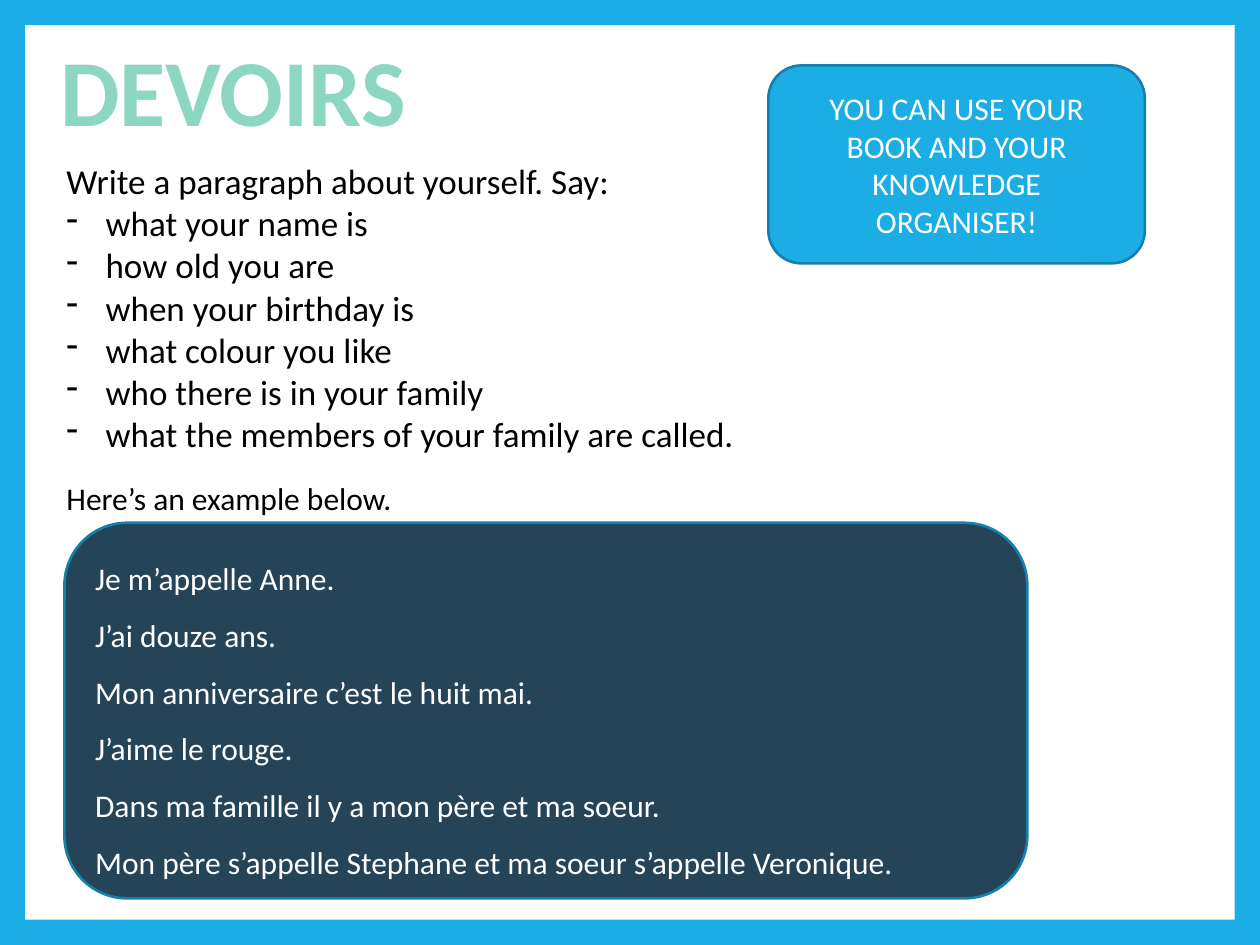
from lxml.etree import SubElement
from pptx import Presentation
from pptx.dml.color import RGBColor
from pptx.enum.shapes import MSO_SHAPE as Shape
from pptx.enum.text import MSO_ANCHOR as Anchor, MSO_AUTO_SIZE as AutoSize, PP_ALIGN as Align
from pptx.oxml.ns import qn
from pptx.util import Cm, Pt

FONT = "Calibri"
BLUE, EDGE, NAVY, MINT = "1CADE4", "1580A9", "264457", "8DD6C1"
WHITE, BLACK = "FFFFFF", "000000"
BORDER = 0.51
HANGING = 0.79

TASKS = [
    "what your name is",
    "how old you are",
    "when your birthday is",
    "what colour you like",
    "who there is in your family",
    "what the members of your family are called.",
]
EXAMPLE = [
    "Je m’appelle Anne.",
    "J’ai douze ans.",
    "Mon anniversaire c’est le huit mai.",
    "J’aime le rouge.",
    "Dans ma famille il y a mon père et ma soeur.",
    "Mon père s’appelle Stephane et ma soeur s’appelle Veronique.",
]


def set_color(target, value):
    """Give a fill or a line a solid colour."""
    target.solid()
    target.fore_color.rgb = RGBColor.from_string(value)


def write_lines(frame, lines, size, color, bold=False, align=Align.LEFT, spacing=None):
    """Write one paragraph per line and return the paragraphs."""
    for index, line in enumerate(lines):
        paragraph = frame.add_paragraph() if index else frame.paragraphs[0]
        paragraph.alignment = align
        paragraph.line_spacing = spacing
        run = paragraph.add_run()
        run.text = line
        run.font.name, run.font.size, run.font.bold = FONT, Pt(size), bold
        set_color(run.font.fill, color)
    return frame.paragraphs


def add_text(slide, box, lines, size, color, wrap=True, **style):
    frame = slide.shapes.add_textbox(*map(Cm, box)).text_frame
    frame.word_wrap = wrap
    frame.auto_size = AutoSize.SHAPE_TO_FIT_TEXT
    return write_lines(frame, lines, size, color, **style)


def add_panel(slide, kind, box, fill, edge=None):
    panel = slide.shapes.add_shape(kind, *map(Cm, box))
    panel.shadow.inherit = False
    set_color(panel.fill, fill)
    if edge:
        set_color(panel.line.fill, edge)
        panel.line.width = Pt(1.5)
    else:
        panel.line.fill.background()
    return panel


def add_dash(paragraph):
    """Turn a paragraph into a dashed list item with a hanging indent."""
    properties = paragraph._p.get_or_add_pPr()
    properties.set("marL", str(Cm(HANGING)))
    properties.set("indent", str(-Cm(HANGING)))
    SubElement(properties, qn("a:buFontTx"))
    SubElement(properties, qn("a:buChar")).set("char", "-")


def add_background(slide, width, height):
    set_color(slide.background.fill, BLUE)
    box = (BORDER, BORDER, width - 2 * BORDER, height - 2 * BORDER)
    add_panel(slide, Shape.RECTANGLE, box, WHITE)


def add_instructions(slide, left, top, width):
    """Task list with the caption of the example under it."""
    intro = "Write a paragraph about yourself. Say:"
    paragraphs = add_text(slide, (left, top, width, 6.25), [intro, *TASKS], 20, BLACK)
    for paragraph in paragraphs[1:]:
        add_dash(paragraph)
    caption = (left, top + 6.43, width, 1.02)
    add_text(slide, caption, ["Here’s an example below."], 18, BLACK)


def add_rounded_text(slide, box, fill, lines, **style):
    panel = add_panel(slide, Shape.ROUNDED_RECTANGLE, box, fill, EDGE)
    frame = panel.text_frame
    frame.word_wrap = True
    frame.vertical_anchor = Anchor.MIDDLE
    write_lines(frame, lines, 18, WHITE, **style)


def main():
    width, height = 25.4, 19.05
    presentation = Presentation()
    presentation.slide_width, presentation.slide_height = Cm(width), Cm(height)
    slide = presentation.slides.add_slide(presentation.slide_layouts[6])

    add_background(slide, width, height)

    # Heading
    add_text(slide, (BORDER, 0.53, 8.38, 2.57), ["DEVOIRS"], 54, MINT,
             wrap=False, bold=True, align=Align.CENTER)

    add_instructions(slide, 1.09, 3.1, 20.4)

    # Hint
    add_rounded_text(slide, (15.49, 1.32, 7.59, 3.99), BLUE,
                     ["YOU CAN USE YOUR BOOK AND YOUR KNOWLEDGE ORGANISER!"],
                     align=Align.CENTER)

    # Example answer
    add_rounded_text(slide, (1.3, 10.54, 19.41, 7.57), NAVY, EXAMPLE, spacing=1.5)

    presentation.save("out.pptx")


if __name__ == "__main__":
    main()
